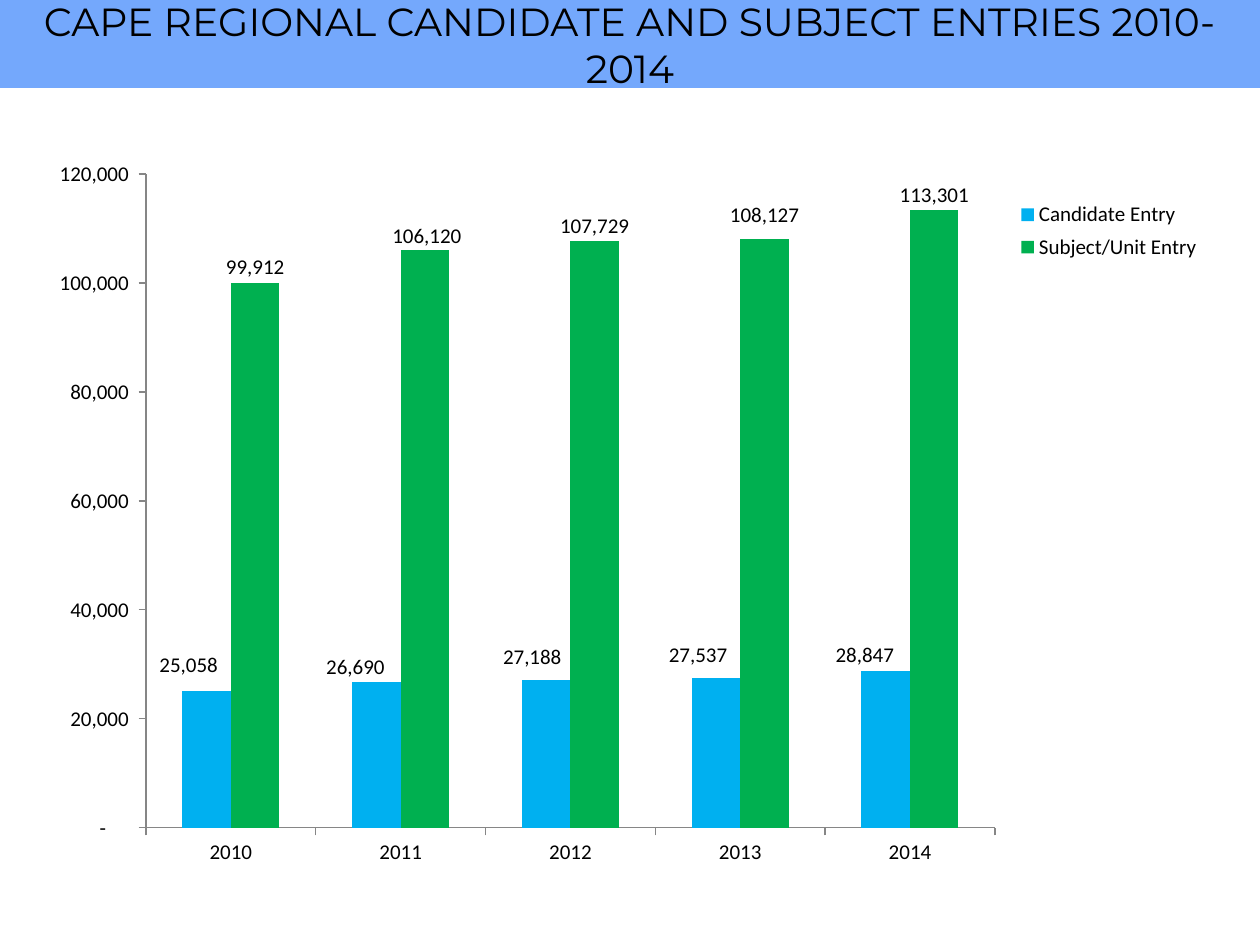
from lxml.etree import SubElement
from pptx import Presentation
from pptx.chart.data import CategoryChartData
from pptx.dml.color import RGBColor
from pptx.enum.chart import XL_CHART_TYPE, XL_LABEL_POSITION, XL_LEGEND_POSITION, XL_TICK_MARK
from pptx.enum.shapes import MSO_SHAPE
from pptx.enum.text import MSO_ANCHOR, PP_ALIGN
from pptx.oxml import parse_xml
from pptx.oxml.ns import nsdecls, qn
from pptx.util import Emu, Pt

PIXEL = 914400 // 126
CHART_BOX = (32, 147, 1187, 733)
PLOT_BOX = (146, 174, 849, 654)
LEGEND_BOX = (1016, 195, 186, 72)
YEARS = ["2010", "2011", "2012", "2013", "2014"]
AXIS_FORMAT = '_-* #,##0_-;\\-* #,##0_-;_-* "-"??_-;_-@_'
SERIES = [
    ("Candidate Entry", "00B0F0", [25058, 26690, 27188, 27537, 28847],
     [(-18, -9), (-21, 2), (-14, -5), (-18, -5), (-21, 2)]),
    ("Subject/Unit Entry", "00B050", [99912, 106120, 107729, 108127, 113301],
     [(0, 1), (2, 4), (0, 3), (0, -6), (0, 2)]),
]


def px(*lengths):
    """Turn pixel lengths into EMU."""
    return [Emu(length * PIXEL) for length in lengths]


def color(value):
    """Return the colour for a hex string."""
    return RGBColor.from_string(value)


def style_font(font, size, name="Calibri", fill="000000"):
    """Set the face, size and colour of a font."""
    font.name = name
    font.size = Pt(size)
    font.color.rgb = color(fill)


def write_text(frame, text, size, name, align=PP_ALIGN.CENTER, anchor=MSO_ANCHOR.MIDDLE):
    """Write one formatted paragraph into a text frame."""
    frame.word_wrap = True
    frame.vertical_anchor = anchor
    para = frame.paragraphs[0]
    para.alignment = align
    span = para.add_run()
    span.text = text
    style_font(span.font, size, name)


def add_banner(page, text, box, fill):
    """Add a filled title band."""
    band = page.shapes.add_shape(MSO_SHAPE.RECTANGLE, *px(*box))
    band.shadow.inherit = False
    band.fill.solid()
    band.fill.fore_color.rgb = color(fill)
    band.line.fill.background()
    write_text(band.text_frame, text, 22.4, "Montserrat")


def make_layout(**values):
    """Build a manual layout element for a chart part."""
    layout = parse_xml(f"<c:layout {nsdecls('c')}><c:manualLayout/></c:layout>")
    for tag, value in values.items():
        SubElement(layout[0], qn(f"c:{tag}")).set("val", str(value))
    return layout


def box_layout(box, **target):
    """Build a layout that fixes a chart part to a pixel box on the page."""
    left, top, width, height = box
    chart_left, chart_top, chart_width, chart_height = CHART_BOX
    return make_layout(**target, xMode="edge", yMode="edge",
                       x=(left - chart_left) / chart_width, y=(top - chart_top) / chart_height,
                       w=width / chart_width, h=height / chart_height)


def style_axis(axis):
    """Give an axis its line, ticks and font."""
    axis.has_major_gridlines = False
    axis.major_tick_mark = XL_TICK_MARK.OUTSIDE
    axis.minor_tick_mark = XL_TICK_MARK.NONE
    axis.format.line.color.rgb = color("868686")
    axis.format.line.width = Pt(0.75)
    style_font(axis.tick_labels.font, 12)


def style_series(series, fill, offsets):
    """Colour a series and nudge each value label by its pixel offset."""
    series.format.fill.solid()
    series.format.fill.fore_color.rgb = color(fill)
    series.invert_if_negative = False
    labels = series.data_labels
    labels.show_value = True
    labels.position = XL_LABEL_POSITION.OUTSIDE_END
    style_font(labels.font, 12)
    for index, (right, down) in enumerate(offsets):
        label = series.points[index].data_label
        label.position = XL_LABEL_POSITION.OUTSIDE_END
        style_font(label.font, 12)
    for node, (right, down) in zip(labels._element.findall(qn("c:dLbl")), offsets):
        layout = make_layout(x=right / CHART_BOX[2], y=down / CHART_BOX[3])
        node.find(qn("c:idx")).addnext(layout)


def add_legend(chart):
    """Add the legend at the right of the plot."""
    chart.has_legend = True
    legend = chart.legend
    legend.position = XL_LEGEND_POSITION.RIGHT
    legend.include_in_layout = False
    style_font(legend.font, 12)
    element = legend._element
    for old in element.findall(qn("c:layout")):
        element.remove(old)
    element.find(qn("c:legendPos")).addnext(box_layout(LEGEND_BOX))


def add_entries_chart(page):
    """Add the clustered columns of entries by year."""
    data = CategoryChartData(number_format="#,##0")
    data.categories = YEARS
    for name, fill, values, offsets in SERIES:
        data.add_series(name, values)
    chart = page.shapes.add_chart(XL_CHART_TYPE.COLUMN_CLUSTERED, *px(*CHART_BOX), data).chart
    chart.has_title = False
    style_font(chart.font, 10)
    plot = chart.plots[0]
    plot.gap_width = 150
    plot.overlap = 0
    plot.vary_by_categories = False
    for series, (name, fill, values, offsets) in zip(plot.series, SERIES):
        style_series(series, fill, offsets)
    style_axis(chart.category_axis)
    style_axis(chart.value_axis)
    chart.value_axis.minimum_scale = 0
    chart.value_axis.maximum_scale = 120000
    chart.value_axis.major_unit = 20000
    chart.value_axis.tick_labels.number_format = AXIS_FORMAT
    chart.value_axis.tick_labels.number_format_is_linked = False
    add_legend(chart)
    area = chart._chartSpace.chart.plotArea
    for old in area.findall(qn("c:layout")):
        area.remove(old)
    area.insert(0, box_layout(PLOT_BOX, layoutTarget="inner"))


def main():
    """Build and save the deck."""
    deck = Presentation()
    deck.slide_width, deck.slide_height = px(1260, 945)
    page = deck.slides.add_slide(deck.slide_layouts[6])
    add_entries_chart(page)
    add_banner(page, "CAPE REGIONAL CANDIDATE AND SUBJECT ENTRIES 2010-2014",
               (0, 0, 1260, 88), "74A8FC")
    deck.save("out.pptx")


if __name__ == "__main__":
    main()
